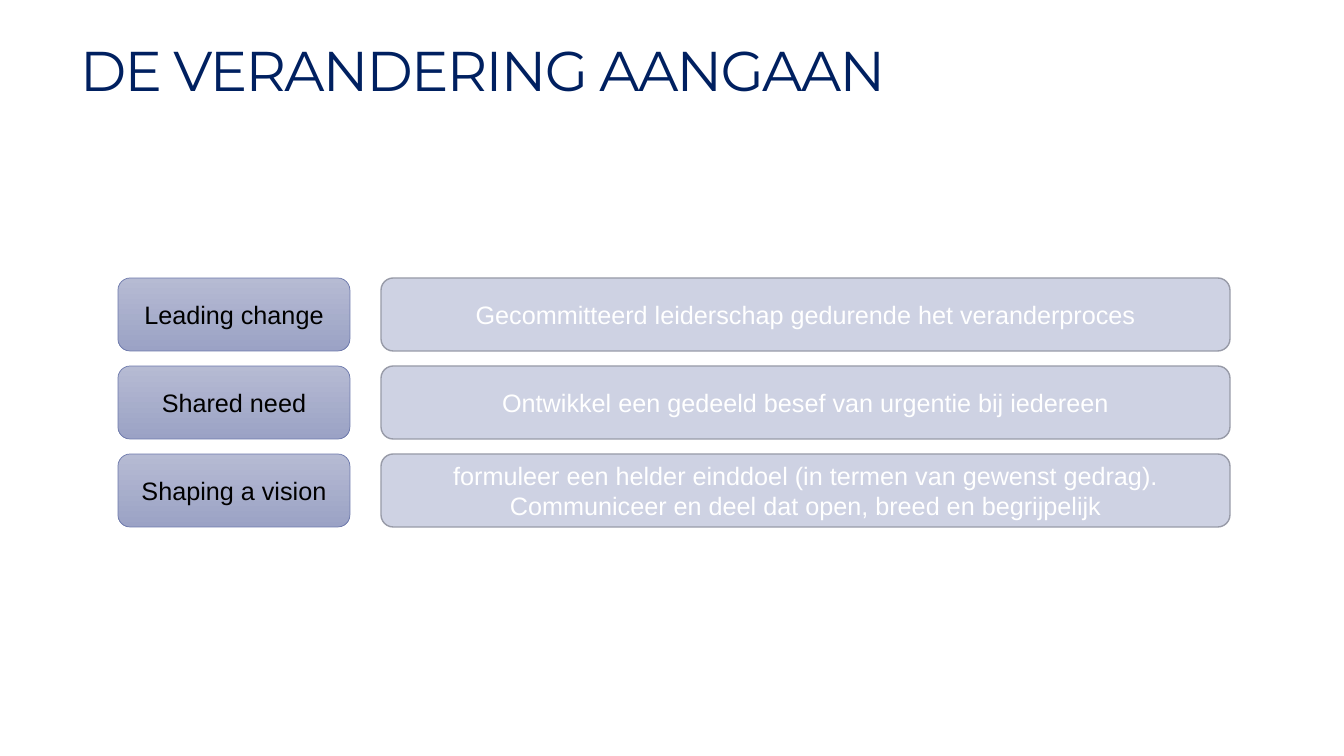
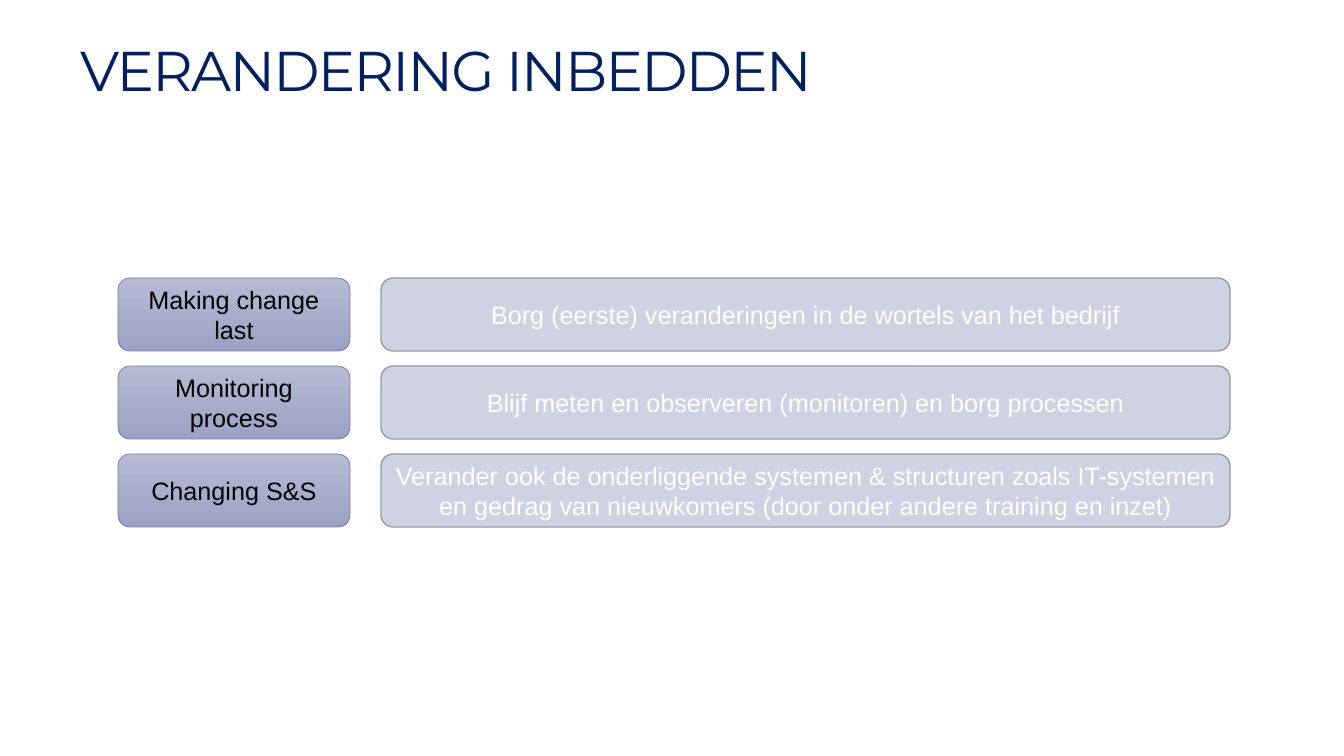
from dataclasses import dataclass

from pptx import Presentation
from pptx.dml.color import RGBColor
from pptx.enum.shapes import MSO_SHAPE
from pptx.enum.text import MSO_ANCHOR, MSO_AUTO_SIZE, PP_ALIGN
from pptx.oxml.ns import qn
from pptx.shapes.autoshape import Shape
from pptx.slide import Slide
from pptx.util import Emu, Pt

ROUNDED = MSO_SHAPE.ROUNDED_RECTANGLE
TOP, MIDDLE = MSO_ANCHOR.TOP, MSO_ANCHOR.MIDDLE
LEFT, CENTER = PP_ALIGN.LEFT, PP_ALIGN.CENTER
NO_AUTOFIT = MSO_AUTO_SIZE.NONE

# Shared look
NAVY = RGBColor(0x00, 0x20, 0x60)
BLACK = RGBColor(0x00, 0x00, 0x00)
WHITE = RGBColor(0xFF, 0xFF, 0xFF)
LABEL_LIGHT = RGBColor(0xB6, 0xBB, 0xD3)
LABEL_DARK = RGBColor(0x9B, 0xA2, 0xC5)
LABEL_LINE = RGBColor(0x6D, 0x79, 0xAC)
DETAIL_FILL = RGBColor(0xCE, 0xD2, 0xE3)
DETAIL_LINE = RGBColor(0x98, 0x9B, 0xA8)
TITLE_FONT, BODY_FONT = "Montserrat", "Arial"
TITLE_ONLY_LAYOUT = 5

# Grid in px
PX_PER_INCH = 100.8
SLIDE_WIDTH, SLIDE_HEIGHT = 1344, 756
ROW_TOP, ROW_HEIGHT, ROW_PITCH = 278, 73, 88


@dataclass(frozen=True)
class BoxStyle:
    left: int
    width: int
    fills: tuple[RGBColor, ...]
    line: RGBColor
    line_width: float
    text: RGBColor


@dataclass(frozen=True)
class Step:
    label: str
    detail: str


@dataclass(frozen=True)
class Phase:
    title: str
    steps: tuple[Step, ...]


LABEL = BoxStyle(118, 232, (LABEL_LIGHT, LABEL_DARK), LABEL_LINE, 0.5, BLACK)
DETAIL = BoxStyle(381, 849, (DETAIL_FILL,), DETAIL_LINE, 1, WHITE)

PHASES = (
    Phase("DE VERANDERING AANGAAN", (
        Step("Leading change",
             "Gecommitteerd leiderschap gedurende het veranderproces"),
        Step("Shared need",
             "Ontwikkel een gedeeld besef van urgentie bij iedereen"),
        Step("Shaping a vision",
             "formuleer een helder einddoel (in termen van gewenst gedrag). "
             "Communiceer en deel dat open, breed en begrijpelijk"),
    )),
    Phase("VERANDERING INBEDDEN", (
        Step("Making change last",
             "Borg (eerste) veranderingen in de wortels van het bedrijf"),
        Step("Monitoring process",
             "Blijf meten en observeren (monitoren) en borg processen"),
        Step("Changing S&S",
             "Verander ook de onderliggende systemen & structuren zoals "
             "IT-systemen en gedrag van nieuwkomers "
             "(door onder andere training en inzet)"),
    )),
)


def px(length: int) -> Emu:
    return Emu(round(length * 914400 / PX_PER_INCH))


def set_text(shape: Shape, text: str, font_name: str, size: int,
             color: RGBColor, alignment: PP_ALIGN, anchor: MSO_ANCHOR) -> None:
    frame = shape.text_frame
    frame.text = text
    frame.word_wrap = True
    frame.auto_size = NO_AUTOFIT
    frame.vertical_anchor = anchor
    paragraph = frame.paragraphs[0]
    paragraph.alignment = alignment
    font = paragraph.font
    font.name, font.size = font_name, Pt(size)
    font.color.rgb = color


def add_title(slide: Slide, text: str) -> None:
    title = slide.shapes.title
    title.left, title.top, title.width, title.height = map(px, (75, 38, 1125, 72))
    set_text(title, text, TITLE_FONT, 40, NAVY, LEFT, TOP)
    frame = title.text_frame
    frame.margin_left = frame.margin_right = px(5)
    frame.margin_top = frame.margin_bottom = px(5)
    paragraph = frame.paragraphs[0]
    paragraph.line_spacing = 0.9
    # Tighten the letter spacing by 1.2 pt
    paragraph._p.pPr.find(qn("a:defRPr")).set("spc", "-120")


def add_box(slide: Slide, style: BoxStyle, top: int, text: str) -> None:
    box = slide.shapes.add_shape(
        ROUNDED, px(style.left), px(top), px(style.width), px(ROW_HEIGHT))
    box.shadow.inherit = False
    if len(style.fills) > 1:
        box.fill.gradient()
        box.fill.gradient_angle = 270
        for stop, color in zip(box.fill.gradient_stops, style.fills):
            stop.color.rgb = color
    else:
        box.fill.solid()
        box.fill.fore_color.rgb = style.fills[0]
    box.line.color.rgb = style.line
    box.line.width = Pt(style.line_width)
    set_text(box, text, BODY_FONT, 18, style.text, CENTER, MIDDLE)


def add_phase(presentation: Presentation, phase: Phase) -> None:
    layout = presentation.slide_layouts[TITLE_ONLY_LAYOUT]
    slide = presentation.slides.add_slide(layout)
    add_title(slide, phase.title)
    for row, step in enumerate(phase.steps):
        top = ROW_TOP + row * ROW_PITCH
        add_box(slide, LABEL, top, step.label)
        add_box(slide, DETAIL, top, step.detail)


def main() -> None:
    presentation = Presentation()
    presentation.slide_width = px(SLIDE_WIDTH)
    presentation.slide_height = px(SLIDE_HEIGHT)
    for phase in PHASES:
        add_phase(presentation, phase)
    presentation.save("out.pptx")


if __name__ == "__main__":
    main()
